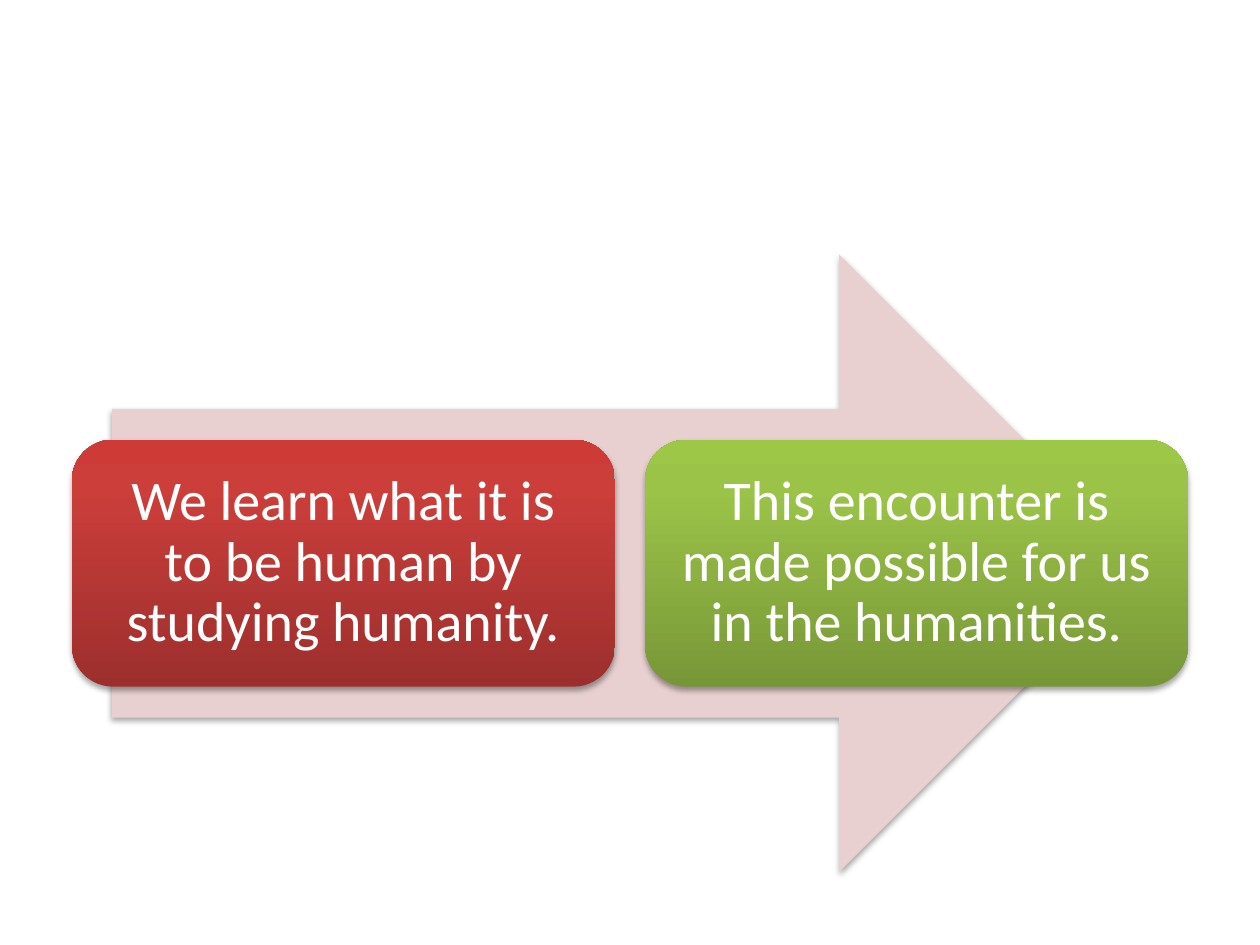
from dataclasses import dataclass

from lxml import etree
from pptx import Presentation
from pptx.dml.color import RGBColor
from pptx.enum.shapes import MSO_SHAPE
from pptx.enum.text import MSO_ANCHOR, PP_ALIGN
from pptx.oxml.ns import qn
from pptx.util import Inches, Pt

ARROW = MSO_SHAPE.RIGHT_ARROW
ROUNDED = MSO_SHAPE.ROUNDED_RECTANGLE
MIDDLE = MSO_ANCHOR.MIDDLE
CENTER = PP_ALIGN.CENTER


@dataclass(frozen=True)
class Theme:
    """Colours and type of the slide."""
    font: str = "Calibri"
    size: int = 32
    text: str = "FFFFFF"
    arrow: str = "E8D0D0"
    shadow: str = "000000"
    red: tuple = ((0, "9C2F2D"), (80, "CB3E3A"), (100, "CE3B37"))
    green: tuple = ((0, "779737"), (80, "9BC348"), (100, "9DC746"))


THEME = Theme()
STEPS = (
    ("We learn what it is to be human by studying humanity.", THEME.red),
    ("This encounter is made possible for us in the humanities.", THEME.green),
)


def add_color(parent, tag, color, **attributes):
    """Add an element that holds one colour and return the colour."""
    holder = etree.SubElement(parent, qn(tag), attributes)
    return etree.SubElement(holder, qn("a:srgbClr"), val=color)


def add_shadowed(page, kind, box):
    """Add a borderless shape with a soft shadow below it."""
    shape = page.shapes.add_shape(kind, *(Inches(length) for length in box))
    shape.line.fill.background()
    shape.shadow.inherit = False
    effects = shape._element.spPr.find(qn("a:effectLst"))
    color = add_color(effects, "a:outerShdw", THEME.shadow,
                      blurRad=str(Pt(3.1)), dist=str(Pt(1.8)),
                      dir="5400000", rotWithShape="0")
    etree.SubElement(color, qn("a:alpha"), val="35000")
    return shape


def fill_upward(shape, stops):
    """Fill a shape with a gradient that runs from bottom to top."""
    shape.fill.gradient()
    shape.fill.gradient_angle = 90
    stop_list = shape._element.spPr.find(qn("a:gradFill")).find(qn("a:gsLst"))
    for old_stop in list(stop_list):
        stop_list.remove(old_stop)
    for position, color in stops:
        add_color(stop_list, "a:gs", color, pos=str(position * 1000))


def add_step(page, box, text, stops):
    """Place one rounded step with its centred sentence."""
    shape = add_shadowed(page, ROUNDED, box)
    fill_upward(shape, stops)
    frame = shape.text_frame
    margin = Inches(0.15)
    frame_format = {
        "word_wrap": True, "vertical_anchor": MIDDLE,
        "margin_left": margin, "margin_right": margin,
        "margin_top": margin, "margin_bottom": margin,
    }
    for name, value in frame_format.items():
        setattr(frame, name, value)
    para = frame.paragraphs[0]
    para.alignment = CENTER
    para.line_spacing = 0.9
    span = para.add_run()
    span.text = text
    for name, value in {"name": THEME.font, "size": Pt(THEME.size)}.items():
        setattr(span.font, name, value)
    span.font.color.rgb = RGBColor.from_string(THEME.text)


def add_process(page, box):
    """Place the wide arrow and the row of steps over it."""
    left, top, width, height = box
    inset = 0.32
    arrow = add_shadowed(page, ARROW,
                         (left + inset, top, width - 2 * inset, height))
    arrow.fill.solid()
    arrow.fill.fore_color.rgb = RGBColor.from_string(THEME.arrow)
    gap = 0.24
    step_width = (width - gap * (len(STEPS) - 1)) / len(STEPS)
    step_height = height * 0.4
    step_top = top + (height - step_height) / 2
    for index, (text, stops) in enumerate(STEPS):
        step_left = left + index * (step_width + gap)
        add_step(page, (step_left, step_top, step_width, step_height),
                 text, stops)


def main():
    """Build the deck and save it."""
    deck = Presentation()
    deck.slide_width, deck.slide_height = Inches(10), Inches(7.5)
    page = deck.slides.add_slide(deck.slide_layouts[6])
    add_process(page, (0.57, 2.02, 8.86, 4.9))
    deck.save("out.pptx")


if __name__ == "__main__":
    main()
